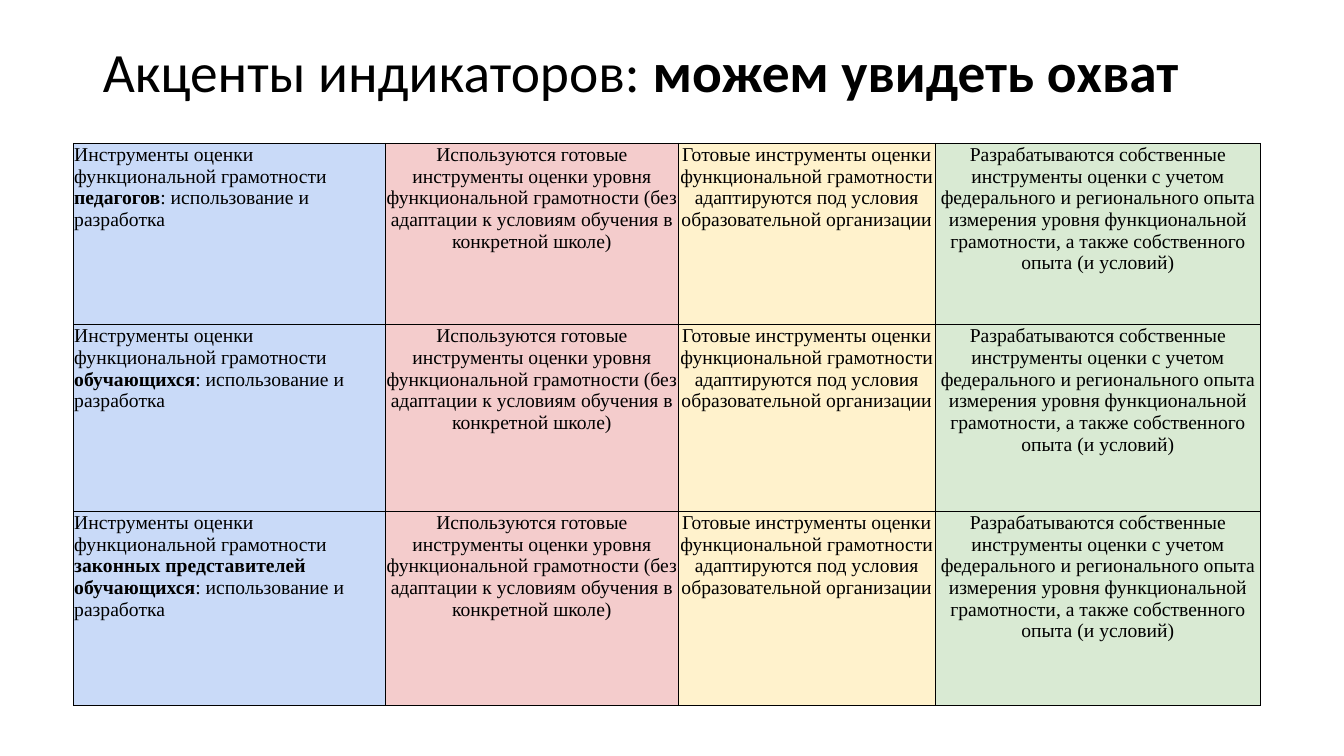
"""Build a slide with a colour-coded table of functional literacy indicators."""
from dataclasses import dataclass

from lxml import etree
from pptx import Presentation
from pptx import util as u
from pptx.dml.color import RGBColor
from pptx.enum import text
from pptx.oxml import ns

COLOURS = {"ink": "000000", "subject": "C9DAF8", "ready": "F4CCCC",
           "adapted": "FFF2CC", "own": "D9EAD3"}
CELL_FORMAT = {"margin_left": u.Cm(0.02), "margin_right": u.Cm(0.02),
               "margin_top": u.Cm(0.02), "margin_bottom": 0,
               "vertical_anchor": text.MSO_ANCHOR.TOP}
TITLE_FORMAT = {"left": u.Cm(2.34), "top": u.Cm(1.02),
                "width": u.Cm(29.21), "height": u.Cm(1.73)}
TITLE_FRAME = {"word_wrap": True, "auto_size": text.MSO_AUTO_SIZE.NONE,
               "vertical_anchor": text.MSO_ANCHOR.MIDDLE}


@dataclass(frozen=True)
class Run:
    """A piece of wording and its weight."""
    wording: str
    bold: bool = False


@dataclass(frozen=True)
class Level:
    """A table column for one level of the indicator."""
    width: float
    colour: str
    wording: str = ""


@dataclass(frozen=True)
class Audience:
    """A table row for one group of people."""
    height: float
    name: str


LEVELS = [
    Level(7.87, "subject"),
    Level(7.37, "ready", "Используются готовые инструменты оценки уровня функциональной "
          "грамотности (без адаптации к условиям обучения в конкретной школе)"),
    Level(6.48, "adapted", "Готовые инструменты оценки функциональной грамотности "
          "адаптируются под условия образовательной организации"),
    Level(8.2, "own", "Разрабатываются собственные инструменты оценки с учетом федерального "
          "и регионального опыта измерения уровня функциональной грамотности, "
          "а также собственного опыта (и условий)"),
]
AUDIENCES = [
    Audience(4.57, "педагогов"),
    Audience(4.7, "обучающихся"),
    Audience(4.9, "законных представителей обучающихся"),
]


def apply_format(target, values: dict) -> None:
    """Set every attribute named in values."""
    for attribute, value in values.items():
        setattr(target, attribute, value)


def write(paragraph, runs: list[Run], font: str, size: float, align) -> None:
    """Fill a paragraph with formatted runs."""
    paragraph.alignment = align
    for piece in runs:
        run = paragraph.add_run()
        run.text = piece.wording
        apply_format(run.font, {"name": font, "size": u.Pt(size), "bold": piece.bold})
        run.font.color.rgb = RGBColor.from_string(COLOURS["ink"])


def add_borders(cell) -> None:
    """Draw a thin line on all four sides of a cell."""
    properties = cell._tc.get_or_add_tcPr()
    for position, side in enumerate(("lnL", "lnR", "lnT", "lnB")):
        line = etree.Element(ns.qn(f"a:{side}"), w=str(u.Pt(0.5)))
        fill = etree.SubElement(line, ns.qn("a:solidFill"))
        etree.SubElement(fill, ns.qn("a:srgbClr"), val=COLOURS["ink"])
        properties.insert(position, line)


def draw_cell(cell, audience: Audience, level: Level) -> None:
    """Write and format the cell where an audience meets a level."""
    apply_format(cell, CELL_FORMAT)
    cell.fill.solid()
    cell.fill.fore_color.rgb = RGBColor.from_string(COLOURS[level.colour])
    add_borders(cell)
    if level.wording:
        runs, align = [Run(level.wording)], text.PP_ALIGN.CENTER
    else:
        runs = [Run("Инструменты оценки функциональной грамотности "),
                Run(audience.name, True), Run(": использование и разработка")]
        align = text.PP_ALIGN.LEFT
    write(cell.text_frame.paragraphs[0], runs, "Times New Roman", 14, align)


def draw_title(title) -> None:
    """Place and write the slide title."""
    apply_format(title, TITLE_FORMAT)
    apply_format(title.text_frame, TITLE_FRAME)
    heading = title.text_frame.paragraphs[0]
    heading.line_spacing = 0.9
    write(heading, [Run("Акценты индикаторов: "), Run("можем увидеть охват", True)],
          "Calibri", 39.6, text.PP_ALIGN.LEFT)


def draw_table(slide) -> None:
    """Add the table of audiences and levels."""
    width = sum(level.width for level in LEVELS)
    height = sum(audience.height for audience in AUDIENCES)
    indicators = slide.shapes.add_table(
        len(AUDIENCES), len(LEVELS), u.Cm(1.85), u.Cm(3.61), u.Cm(width), u.Cm(height)).table
    apply_format(indicators, {"first_row": False, "horz_banding": False})
    for column, level in zip(indicators.columns, LEVELS):
        column.width = u.Cm(level.width)
    for row, audience in zip(indicators.rows, AUDIENCES):
        row.height = u.Cm(audience.height)
        for cell, level in zip(row.cells, LEVELS):
            draw_cell(cell, audience, level)


def main() -> None:
    """Build and save the presentation."""
    deck = Presentation()
    apply_format(deck, {"slide_width": u.Cm(33.87), "slide_height": u.Cm(19.05)})
    slide = deck.slides.add_slide(deck.slide_layouts.get_by_name("Title Only"))
    draw_title(slide.shapes.title)
    draw_table(slide)
    deck.save("out.pptx")


if __name__ == "__main__":
    main()
